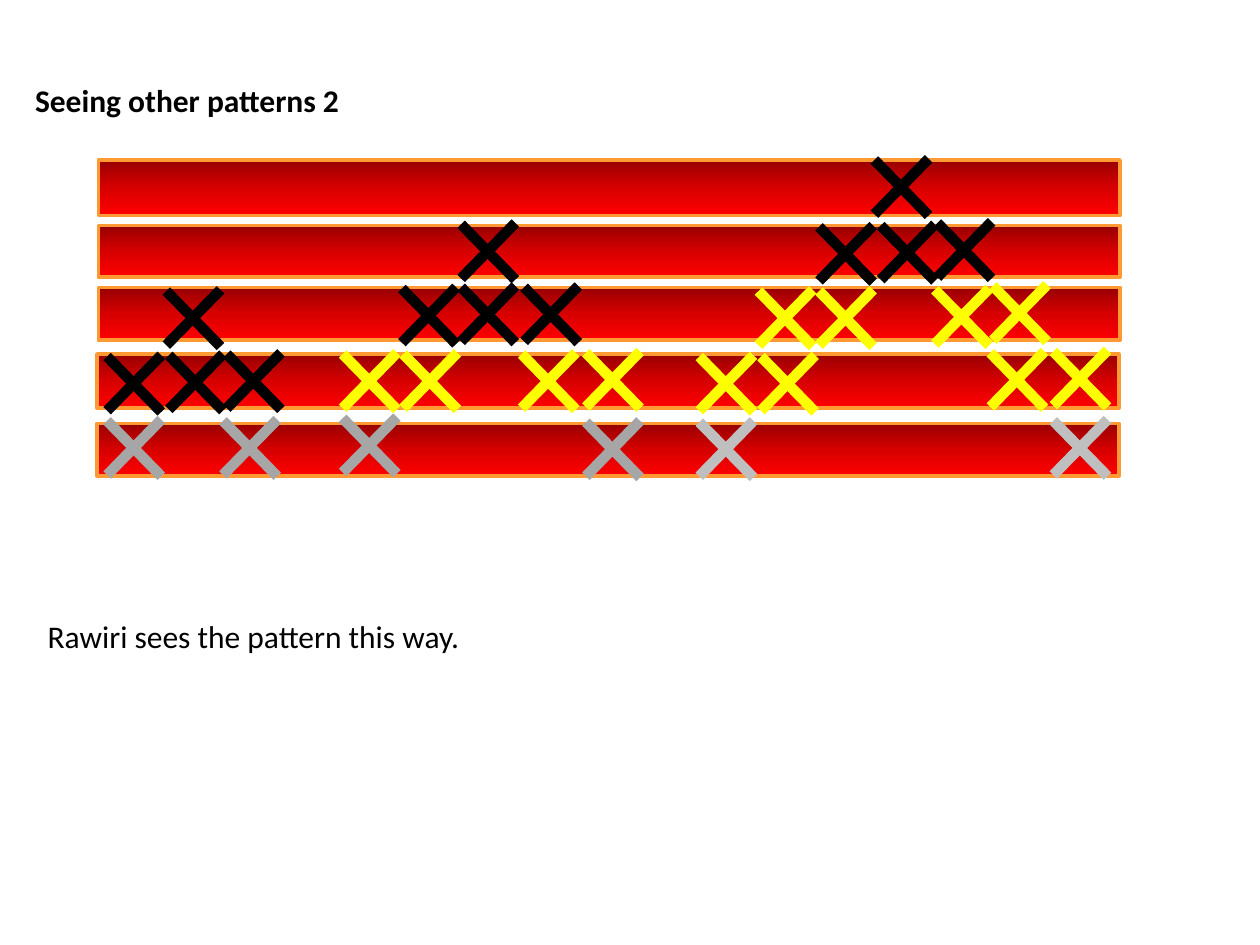
import copy

import lxml.etree
import pptx
import pptx.dml.color
import pptx.enum.shapes
import pptx.oxml.ns
import pptx.util
from pptx.util import Inches

COLOURS = {
    "black": "000000", "yellow": "FFFF00", "grey": "A6A6A6", "silver": "BFBFBF",
    "dark red": "970000", "mid red": "D70000", "red": "FF0000", "orange": "FF9933",
}

# Text: wording, left, top, width, bold
TEXTS = [
    ("Rawiri sees the pattern this way.", 0.28, 4.85, 9.45, False),
    ("Seeing other patterns 2", 0.18, 0.59, 4.86, True),
]

# Each band: left, top, height, then its crosses as colour and (left, top) pairs
BANDS = [
    (0.78, 1.27, 0.44, {"black": [(6.94, 1.27)]}),
    (0.78, 1.79, 0.41, {
        "black": [(3.66, 1.78), (6.5, 1.8), (6.99, 1.79), (7.44, 1.77)]}),
    (0.78, 2.28, 0.42, {
        "black": [(1.32, 2.31), (3.19, 2.29), (3.66, 2.28), (4.16, 2.28)],
        "yellow": [(6.02, 2.31), (6.5, 2.31), (7.42, 2.3), (7.88, 2.27)]}),
    (0.77, 2.81, 0.43, {
        "black": [(0.85, 2.83), (1.34, 2.82), (1.8, 2.81)],
        "yellow": [(2.72, 2.81), (3.2, 2.81), (4.14, 2.81), (4.65, 2.8),
                   (5.55, 2.83), (6.04, 2.83), (7.86, 2.8), (8.36, 2.79)]}),
    (0.77, 3.36, 0.42, {
        "grey": [(0.85, 3.34), (1.77, 3.34), (2.72, 3.32), (4.65, 3.35)],
        "silver": [(5.55, 3.35), (8.36, 3.34)]}),
]
BAND_WIDTH = 8.11
CROSS_WIDTH, CROSS_HEIGHT, RISE = 0.43, 0.44, 0.01


def colour(name):
    return pptx.dml.color.RGBColor.from_string(COLOURS[name])


def add_band(page, left, top, height):
    band = page.shapes.add_shape(
        pptx.enum.shapes.MSO_SHAPE.RECTANGLE,
        Inches(left), Inches(top), Inches(BAND_WIDTH), Inches(height))
    band.shadow.inherit = False
    band.line.color.rgb = colour("orange")
    band.line.width = pptx.util.Pt(2)
    band.fill.gradient()
    band.fill.gradient_angle = 270
    # A gradient starts with two stops; repeat the first to get three
    stop_list = band._element.spPr.find(".//" + pptx.oxml.ns.qn("a:gsLst"))
    stop_list.insert(1, copy.deepcopy(stop_list[0]))
    shades = [(0, "dark red"), (0.5, "mid red"), (1, "red")]
    for stop, (position, name) in zip(band.fill.gradient_stops, shades):
        stop.position = position
        stop.color.rgb = colour(name)


def add_stroke(page, start, end, name):
    stroke = page.shapes.add_connector(
        pptx.enum.shapes.MSO_CONNECTOR.STRAIGHT,
        *(Inches(value) for value in start + end))
    stroke.line.color.rgb = colour(name)
    stroke.line.width = pptx.util.Pt(6)
    lxml.etree.SubElement(
        stroke._element.spPr, pptx.oxml.ns.qn("a:effectLst"))


def add_cross(page, left, top, name):
    right, bottom = left + CROSS_WIDTH, top + CROSS_HEIGHT
    add_stroke(page, (left, top), (right, bottom), name)
    add_stroke(page, (right, top - RISE), (left, bottom - RISE), name)


def add_text(page, wording, left, top, width, bold):
    box = page.shapes.add_textbox(
        Inches(left), Inches(top), Inches(width), Inches(0.4))
    box.text_frame.word_wrap = True
    span = box.text_frame.paragraphs[0].add_run()
    span.text = wording
    span.font.name = "Calibri"
    span.font.size = pptx.util.Pt(18)
    span.font.bold = bold
    span.font.color.rgb = colour("black")


def main():
    deck = pptx.Presentation()
    deck.slide_width, deck.slide_height = Inches(10), Inches(7.5)
    page = deck.slides.add_slide(deck.slide_layouts[6])

    # Bands lie behind all the crosses
    for left, top, height, _ in BANDS:
        add_band(page, left, top, height)
    for *_, crosses in BANDS:
        for name, corners in crosses.items():
            for left, top in corners:
                add_cross(page, left, top, name)

    # Heading and caption
    for text in TEXTS:
        add_text(page, *text)

    deck.save("out.pptx")


if __name__ == "__main__":
    main()
